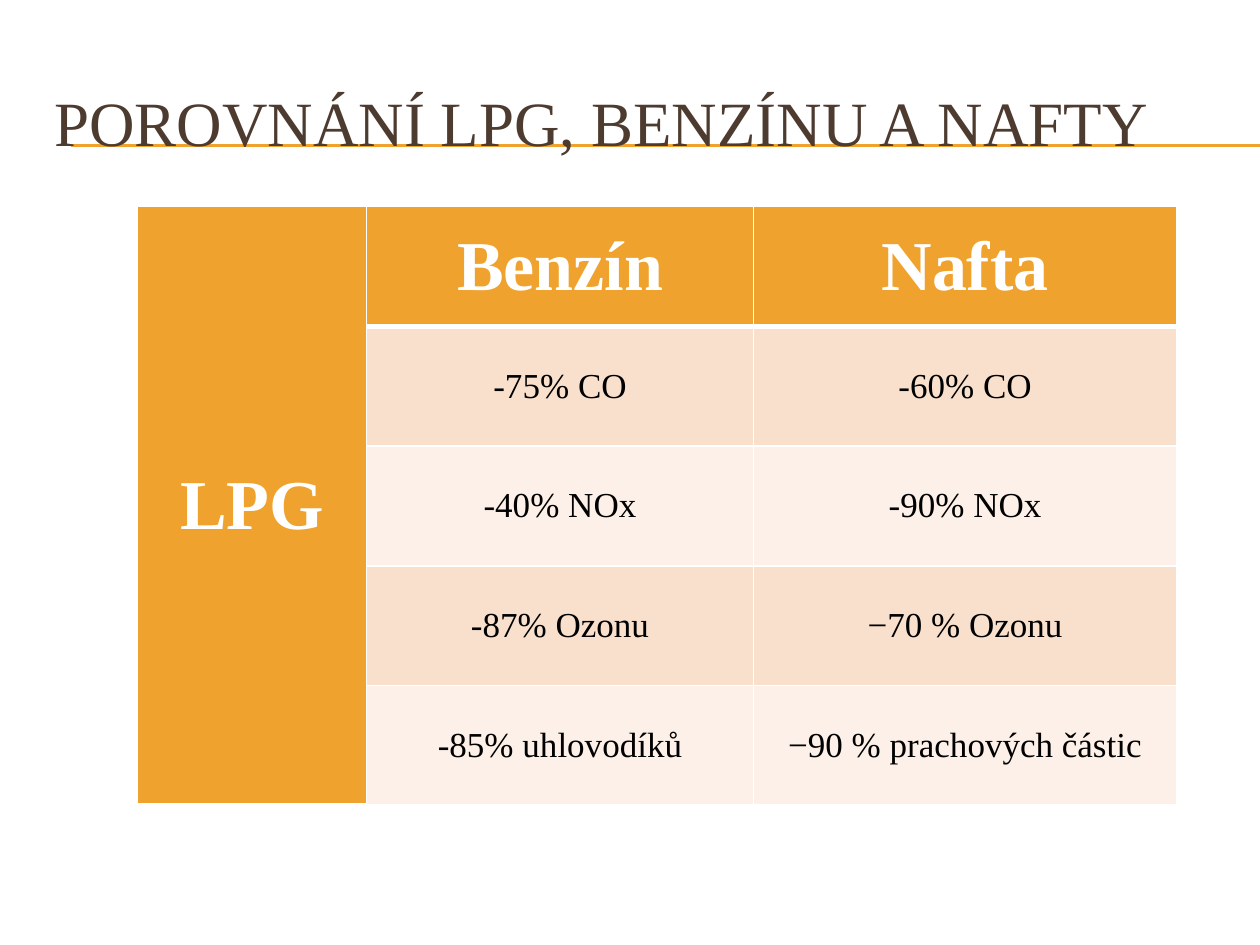
from dataclasses import dataclass

from lxml.etree import SubElement
from pptx import Presentation
from pptx.dml.color import RGBColor
from pptx.enum.shapes import MSO_CONNECTOR as Connector
from pptx.enum.text import MSO_ANCHOR as Anchor, PP_ALIGN as Align
from pptx.oxml.ns import qn
from pptx.util import Inches, Pt


@dataclass(frozen=True)
class Theme:
    font: str = "Times New Roman"
    accent: str = "F0A22E"
    title: str = "4E3B30"
    body: str = "000000"
    white: str = "FFFFFF"
    bands: tuple = ("F9E0CD", "FCF0E8")
    title_size: int = 36
    header_size: int = 40
    body_size: int = 20
    thin: float = 1
    thick: float = 3


@dataclass(frozen=True)
class Comparison:
    petrol: str
    diesel: str


THEME = Theme()
WIDTH, HEIGHT = 10, 7.5
COLUMNS = (1.82, 3.07, 3.36)
ROW_HEIGHT = 0.95
TABLE_LEFT, TABLE_TOP = 1.09, 1.64
RULE_LEFT, RULE_TOPS = 0.56, (1.15, 1.16)
HEADER = Comparison("Benzín", "Nafta")
REDUCTIONS = (
    Comparison("-75% CO", "-60% CO"),
    Comparison("-40% NOx", "-90% NOx"),
    Comparison("-87% Ozonu", "−70 % Ozonu"),
    Comparison("-85% uhlovodíků", "−90 % prachových částic"),
)


def write(frame, text: str, *, size: int, color: str, bold: bool = False,
          align=Align.CENTER) -> None:
    paragraph = frame.paragraphs[0]
    paragraph.alignment = align
    run = paragraph.add_run()
    run.text = text
    font = run.font
    font.name, font.size, font.bold = THEME.font, Pt(size), bold
    font.color.rgb = RGBColor.from_string(color)


def set_borders(cell, top: float, bottom: float) -> None:
    properties = cell._tc.get_or_add_tcPr()
    widths = {"L": THEME.thin, "R": THEME.thin, "T": top, "B": bottom}
    for side, width in widths.items():
        edge = SubElement(properties, qn(f"a:ln{side}"), w=str(Pt(width)))
        fill = SubElement(edge, qn("a:solidFill"))
        SubElement(fill, qn("a:srgbClr"), val=THEME.white)


def style_cell(cell, fill: str, *, top: float = THEME.thin,
               bottom: float = THEME.thin) -> None:
    # Borders come before the fill in the cell's XML sequence
    set_borders(cell, top, bottom)
    cell.fill.solid()
    cell.fill.fore_color.rgb = RGBColor.from_string(fill)
    cell.vertical_anchor = Anchor.MIDDLE


def add_title(slide, text: str) -> None:
    title = slide.shapes.title
    title.left, title.top = Inches(0.33), Inches(0.5)
    title.width, title.height = Inches(9.5), Inches(0.92)
    title.text_frame.vertical_anchor = Anchor.MIDDLE
    write(title.text_frame, text, size=THEME.title_size, color=THEME.title,
          align=Align.LEFT)


def add_rule(slide, top: float) -> None:
    """Draw a line to the right slide edge, behind the title."""
    rule = slide.shapes.add_connector(
        Connector.STRAIGHT, Inches(RULE_LEFT), Inches(top),
        Inches(WIDTH), Inches(top))
    rule.line.color.rgb = RGBColor.from_string(THEME.accent)
    rule.line.width = Pt(0.75)
    SubElement(rule._element.spPr, qn("a:effectLst"))
    slide.shapes.title._element.addprevious(rule._element)


def add_comparison_table(slide) -> None:
    rows = (HEADER, *REDUCTIONS)
    table = slide.shapes.add_table(
        len(rows), len(COLUMNS), Inches(TABLE_LEFT), Inches(TABLE_TOP),
        Inches(sum(COLUMNS)), Inches(ROW_HEIGHT * len(rows))).table
    table.first_row = table.horz_banding = False
    for column, width in zip(table.columns, COLUMNS):
        column.width = Inches(width)
    for row in table.rows:
        row.height = Inches(ROW_HEIGHT)

    heading = dict(size=THEME.header_size, color=THEME.white, bold=True)
    fuel = table.cell(0, 0)
    fuel.merge(table.cell(len(rows) - 1, 0))
    style_cell(fuel, THEME.accent, bottom=THEME.thick)
    write(fuel.text_frame, "LPG", **heading)

    for index, row in enumerate(rows):
        if index == 0:
            fill, text_format = THEME.accent, heading
            edges = dict(bottom=THEME.thick)
        else:
            fill = THEME.bands[(index - 1) % len(THEME.bands)]
            text_format = dict(size=THEME.body_size, color=THEME.body)
            edges = dict(top=THEME.thick if index == 1 else THEME.thin)
        for column, text in enumerate((row.petrol, row.diesel), start=1):
            cell = table.cell(index, column)
            style_cell(cell, fill, **edges)
            write(cell.text_frame, text, **text_format)


def main() -> None:
    deck = Presentation()
    deck.slide_width, deck.slide_height = Inches(WIDTH), Inches(HEIGHT)
    slide = deck.slides.add_slide(deck.slide_layouts.get_by_name("Title Only"))
    add_title(slide, "POROVNÁNÍ LPG, BENZÍNU A NAFTY")
    for top in RULE_TOPS:
        add_rule(slide, top)
    add_comparison_table(slide)
    deck.save("out.pptx")


if __name__ == "__main__":
    main()
